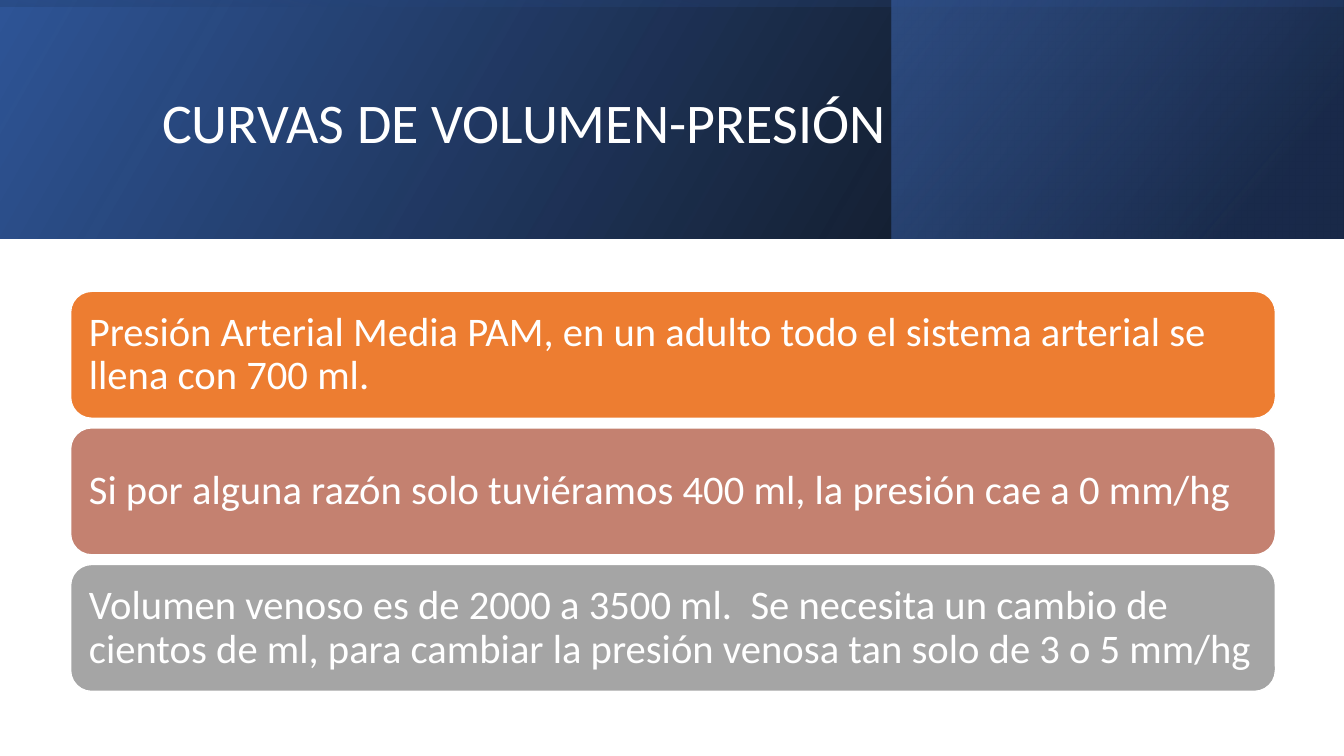
from lxml import etree
from pptx import Presentation
from pptx.dml.color import RGBColor
from pptx.enum import shapes, text
from pptx.oxml import ns
from pptx.util import Inches, Pt

HEX = {
    "white": "FFFFFF", "black": "000000", "navy": "203864",
    "deep": "2F5597", "blue": "4472C4",
    "orange": "ED7D31", "rose": "C48170", "gray": "A5A5A5",
}


def color(name):
    return RGBColor.from_string(HEX[name])


def write(frame, words, size, inset):
    """Fill a text frame with one white, left-aligned, vertically centred run."""
    frame.word_wrap = True
    frame.vertical_anchor = text.MSO_ANCHOR.MIDDLE
    frame.margin_left = frame.margin_right = Inches(inset[0])
    frame.margin_top = frame.margin_bottom = Inches(inset[1])
    par = frame.paragraphs[0]
    par.alignment = text.PP_ALIGN.LEFT
    par.line_spacing = 0.9
    run = par.add_run()
    run.text = words
    run.font.name = "Calibri"
    run.font.size = Pt(size)
    run.font.color.rgb = color("white")


deck = Presentation()
deck.slide_width = Inches(13.33)
deck.slide_height = Inches(7.5)
slide = deck.slides.add_slide(deck.slide_layouts[6])

# Banner: box, rotation, clockwise gradient angle, stops (position, color, opacity %)
layers = [
    ((0, 0, 13.33, 2.37), 0, 330, [(0, "black", 96), (1, "deep", 100)]),
    ((8.84, 0, 4.48, 2.37), 0, 320, [(0.19, "navy", 68), (1, "blue", 48)]),
    ((5.48, -5.48, 2.37, 13.33), 270, 350, [(0.23, "deep", 16), (0.99, "black", 45)]),
]
layers[0][3][1] = (1, "deep", 100)
for box, turn, angle, stops in layers:
    layer = slide.shapes.add_shape(shapes.MSO_SHAPE.RECTANGLE, *map(Inches, box))
    layer.shadow.inherit = False
    layer.line.fill.background()
    layer.rotation = turn
    props = layer.element.spPr
    props.find(ns.qn("a:xfrm")).set("flipH", "1")
    layer.fill.gradient()
    layer.fill.gradient_angle = 360 - angle
    for stop, (pos, name, alpha) in zip(layer.fill.gradient_stops, stops):
        stop.position = pos
        stop.color.rgb = color(name)
    for node, (pos, name, alpha) in zip(props.iter(ns.qn("a:srgbClr")), stops):
        etree.SubElement(node, ns.qn("a:alpha")).set("val", str(alpha * 1000))

title = slide.shapes.add_textbox(Inches(1.51), Inches(0.38), Inches(10.63), Inches(1.72))
write(title.text_frame, "CURVAS DE VOLUMEN-PRESIÓN", 40, (0.1, 0.05))

cards = [
    ("orange", "Presión Arterial Media PAM, en un adulto todo el sistema arterial se "
               "llena con 700 ml."),
    ("rose", "Si por alguna razón solo tuviéramos 400 ml, la presión cae a 0 mm/hg"),
    ("gray", "Volumen venoso es de 2000 a 3500 ml.  Se necesita un cambio de cientos "
             "de ml, para cambiar la presión venosa tan solo de 3 o 5 mm/hg"),
]
for row, (name, words) in enumerate(cards):
    card = slide.shapes.add_shape(
        shapes.MSO_SHAPE.ROUNDED_RECTANGLE,
        Inches(0.7), Inches(2.89 + 1.355 * row), Inches(11.95), Inches(1.26))
    card.shadow.inherit = False
    card.fill.solid()
    card.fill.fore_color.rgb = color(name)
    card.line.color.rgb = color("white")
    card.line.width = Pt(1)
    write(card.text_frame, words, 29, (0.12, 0.12))

deck.save("out.pptx")
